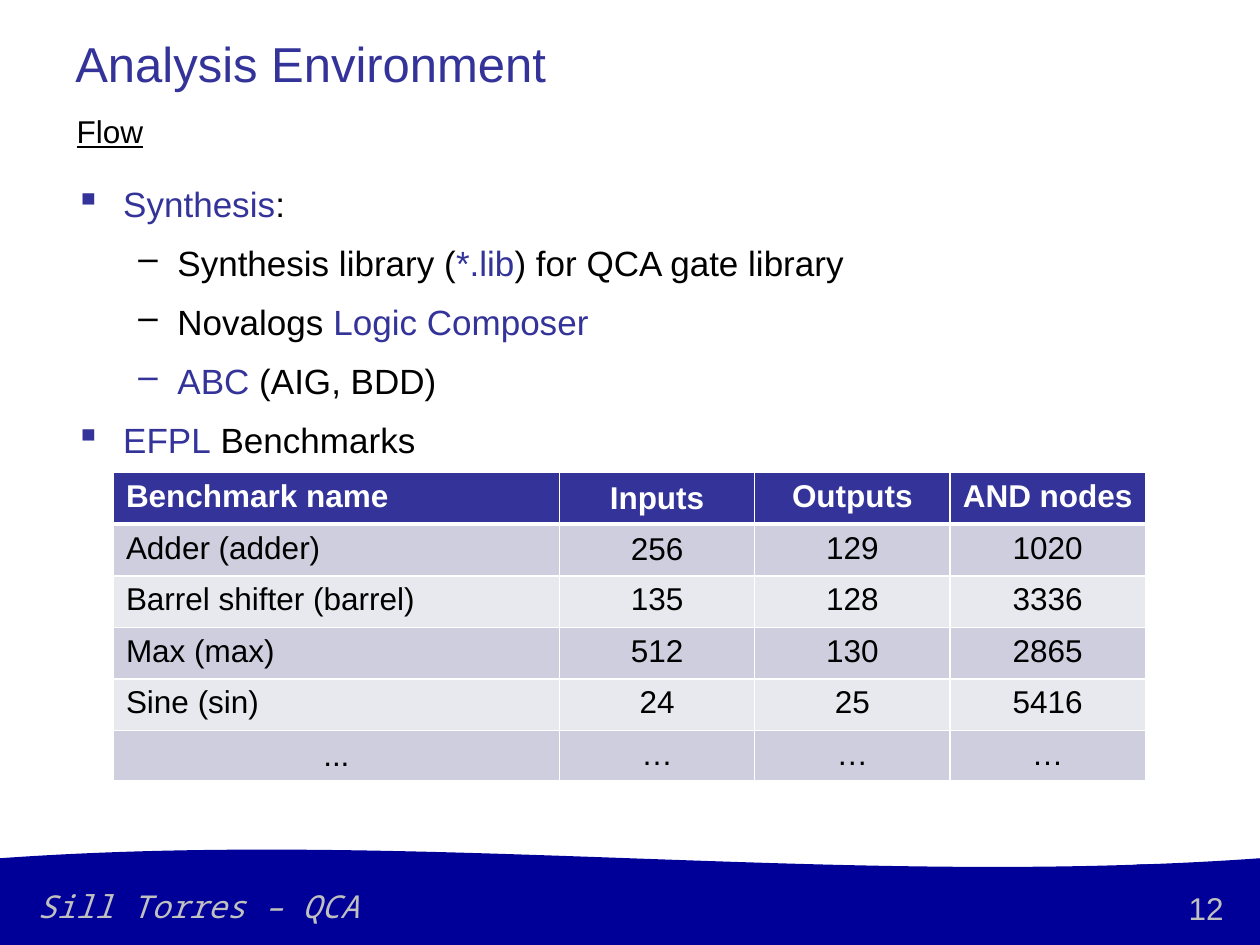
from pptx import Presentation
from pptx.dml.color import RGBColor as Rgb
from pptx.enum.shapes import MSO_SHAPE as Kind
from pptx.enum.text import MSO_ANCHOR as Anchor, PP_ALIGN as Align
from pptx.oxml import parse_xml
from pptx.oxml.ns import nsdecls
from pptx.util import Inches, Pt

BLUE, NAVY, GREY = "333399", "000099", "C0C0C0"
BLACK, WHITE = "000000", "FFFFFF"
BANDS = "CECEDE", "E8E8EF"

# Content: each point is a level and its coloured runs
TITLE, SUB = "Analysis Environment", "Flow"
FOOT, PAGE = "Sill Torres – QCA", "12"
POINTS = [
    (0, [("Synthesis", BLUE), (":", BLACK)]),
    (1, [("Synthesis library (", BLACK), ("*.lib", BLUE),
         (") for QCA gate library", BLACK)]),
    (1, [("Novalogs ", BLACK), ("Logic Composer", BLUE)]),
    (1, [("ABC", BLUE), (" (AIG, BDD)", BLACK)]),
    (0, [("EFPL", BLUE), (" Benchmarks", BLACK)]),
]
ROWS = [
    ("Benchmark name", "Inputs", "Outputs", "AND nodes"),
    ("Adder (adder)", "256", "129", "1020"),
    ("Barrel shifter (barrel)", "135", "128", "3336"),
    ("Max (max)", "512", "130", "2865"),
    ("Sine (sin)", "24", "25", "5416"),
    ("...", "…", "…", "…"),
]
MID = {(0, 1), (1, 1), (5, 0)}  # cells anchored in the middle
COLS = [3.54] + [1.55] * 3
HIGH = [0.41] * 5 + [0.38]
# Per level: text indent, hanging indent, bullet, bullet colour
LEVELS = [(0.38, 0.38, "▪", BLUE), (0.81, 0.31, "–", None)]


def color(code):
    return Rgb.from_string(code)


def style(para, size, code, face="Arial", space=None):
    font = para.font
    font.name, font.size = face, Pt(size)
    font.color.rgb = color(code)
    if space:
        para.line_spacing = space
    return font


def label(slide, at, text, size, code, anchor=Anchor.TOP, wrap=True, **look):
    frame = slide.shapes.add_textbox(*map(Inches, at)).text_frame
    frame.word_wrap, frame.vertical_anchor = wrap, anchor
    para = frame.paragraphs[0]
    para.text = text
    return style(para, size, code, **look)


def block(slide, kind, at):
    shape = slide.shapes.add_shape(kind, *map(Inches, at))
    shape.shadow.inherit = False
    shape.fill.solid()
    shape.fill.fore_color.rgb = color(NAVY)
    shape.line.fill.background()
    return shape


def bullet(para, level):
    left, hang, mark, code = LEVELS[level]
    props = para._p.get_or_add_pPr()
    props.set("marL", str(Inches(left)))
    props.set("indent", str(-Inches(hang)))
    if code:
        props.append(parse_xml(
            f'<a:buClr {nsdecls("a")}><a:srgbClr val="{code}"/></a:buClr>'))
    props.append(parse_xml(f'<a:buChar {nsdecls("a")} char="{mark}"/>'))


def border(cell, row):
    wide = {"T": 3 if row == 1 else 1, "B": 3 if row == 0 else 1}
    for side in "LRTB":
        cell._tc.get_or_add_tcPr().append(parse_xml(
            f'<a:ln{side} {nsdecls("a")} w="{Pt(wide.get(side, 1))}">'
            f'<a:solidFill><a:srgbClr val="{WHITE}"/></a:solidFill>'
            f'</a:ln{side}>'))


def footer(slide):
    wave = block(slide, Kind.WAVE, (0, 6.74, 10, 0.55))
    wave.adjustments[0] = 0.13
    block(slide, Kind.RECTANGLE, (0, 6.9, 10, 0.6))
    frame = block(slide, Kind.RECTANGLE, (9.02, 6.86, 0.79, 0.44)).text_frame
    frame.vertical_anchor = Anchor.TOP
    para = frame.paragraphs[0]
    para.text, para.alignment = PAGE, Align.RIGHT
    style(para, 18, GREY, space=1.5)
    label(slide, (0.2, 6.82, 2.91, 0.68), FOOT, 18, GREY, Anchor.MIDDLE,
          False, face="Noto Sans Mono", space=1.2).italic = True


def points(slide):
    box = slide.shapes.add_textbox(*map(Inches, (0.5, 1.33, 9, 5.37)))
    frame = box.text_frame
    frame.word_wrap = True
    for i, (level, runs) in enumerate(POINTS):
        para = frame.add_paragraph() if i else frame.paragraphs[0]
        para.level = level
        bullet(para, level)
        style(para, 20, BLACK, space=1.2)
        para.space_before = Pt(5 if i else 0)
        for text, code in runs:
            run = para.add_run()
            run.text = text
            run.font.color.rgb = color(code)


def table(slide):
    grid = slide.shapes.add_table(
        len(ROWS), len(COLS), Inches(0.9), Inches(3.75),
        Inches(sum(COLS)), Inches(sum(HIGH))).table
    for col, width in zip(grid.columns, COLS):
        col.width = Inches(width)
    for r, (row, high) in enumerate(zip(ROWS, HIGH)):
        grid.rows[r].height = Inches(high)
        for c, text in enumerate(row):
            cell = grid.cell(r, c)
            border(cell, r)
            cell.fill.solid()
            cell.fill.fore_color.rgb = color(BANDS[(r - 1) % 2] if r else BLUE)
            if (r, c) in MID:
                cell.vertical_anchor = Anchor.MIDDLE
            para = cell.text_frame.paragraphs[0]
            para.text = text
            last = r == len(ROWS) - 1
            para.alignment = Align.CENTER if c or last else Align.LEFT
            style(para, 18, BLACK if r else WHITE).bold = r == 0


def main():
    deck = Presentation()
    deck.slide_width, deck.slide_height = Inches(10), Inches(7.5)
    slide = deck.slides.add_slide(deck.slide_layouts[6])
    footer(slide)
    points(slide)
    label(slide, (0.5, 0.13, 8.99, 0.65), TITLE, 28, BLUE, Anchor.BOTTOM)
    label(slide, (0.51, 0.78, 8.98, 0.55), SUB, 18, BLACK,
          space=1.2).underline = True
    table(slide)
    deck.save("out.pptx")


if __name__ == "__main__":
    main()
